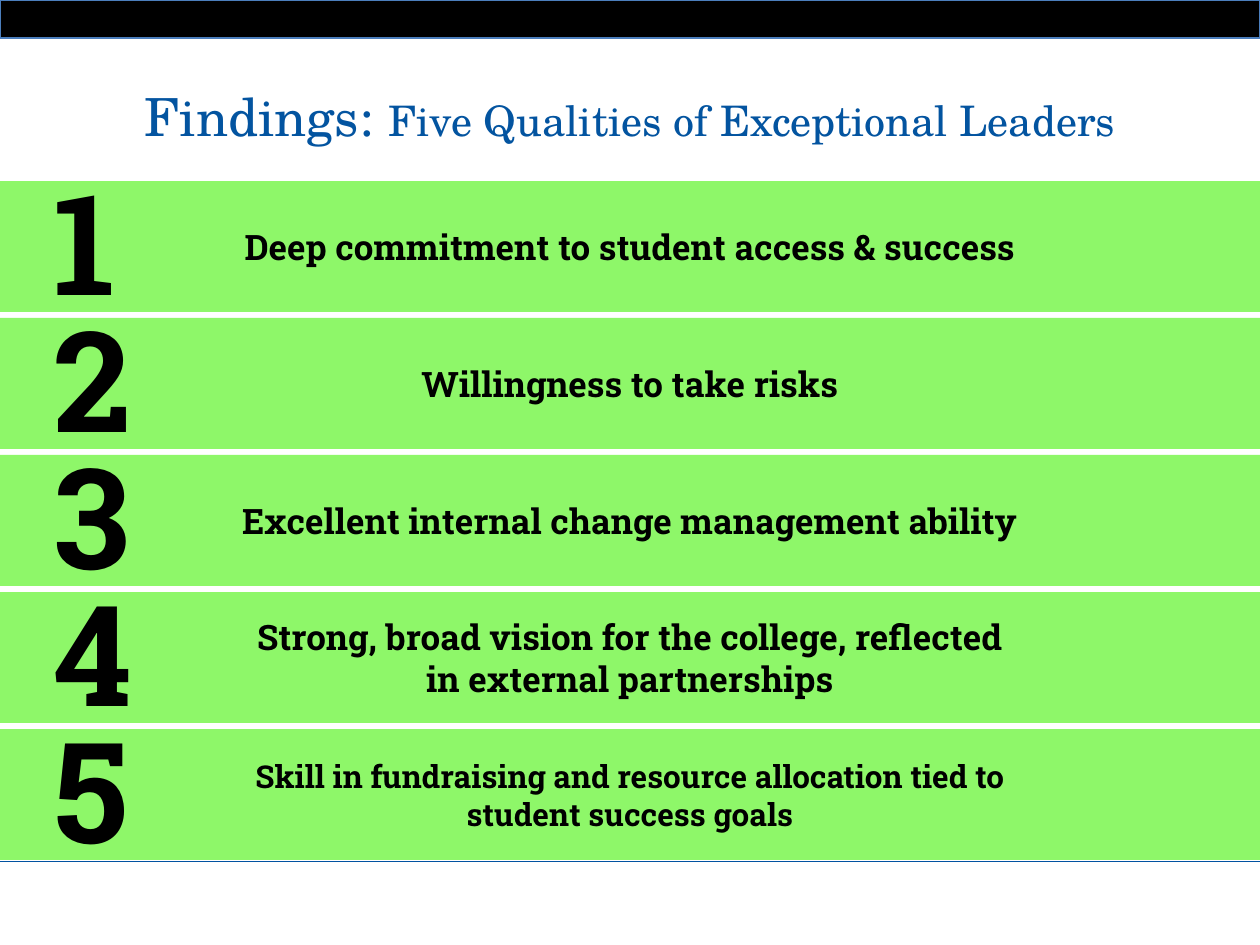
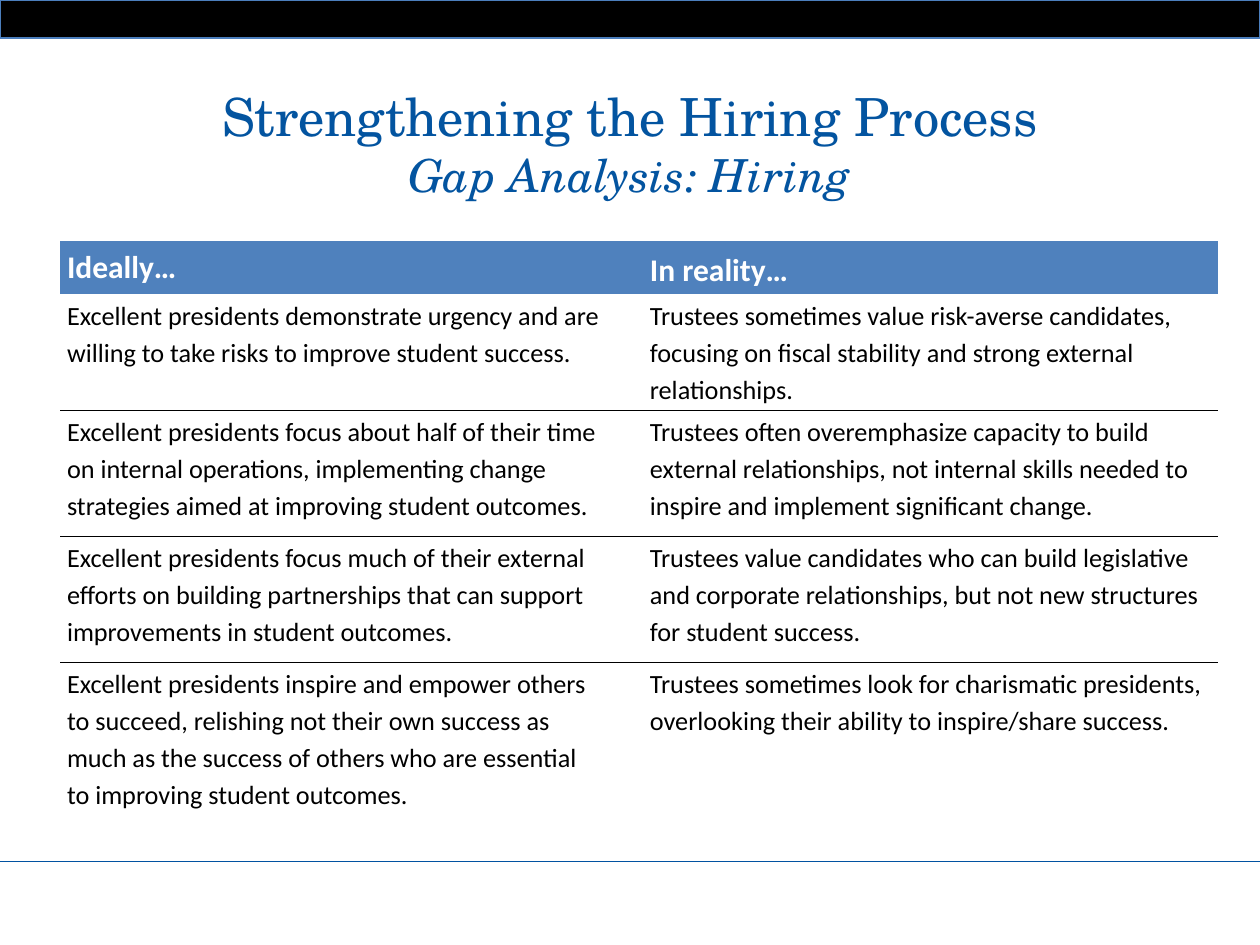
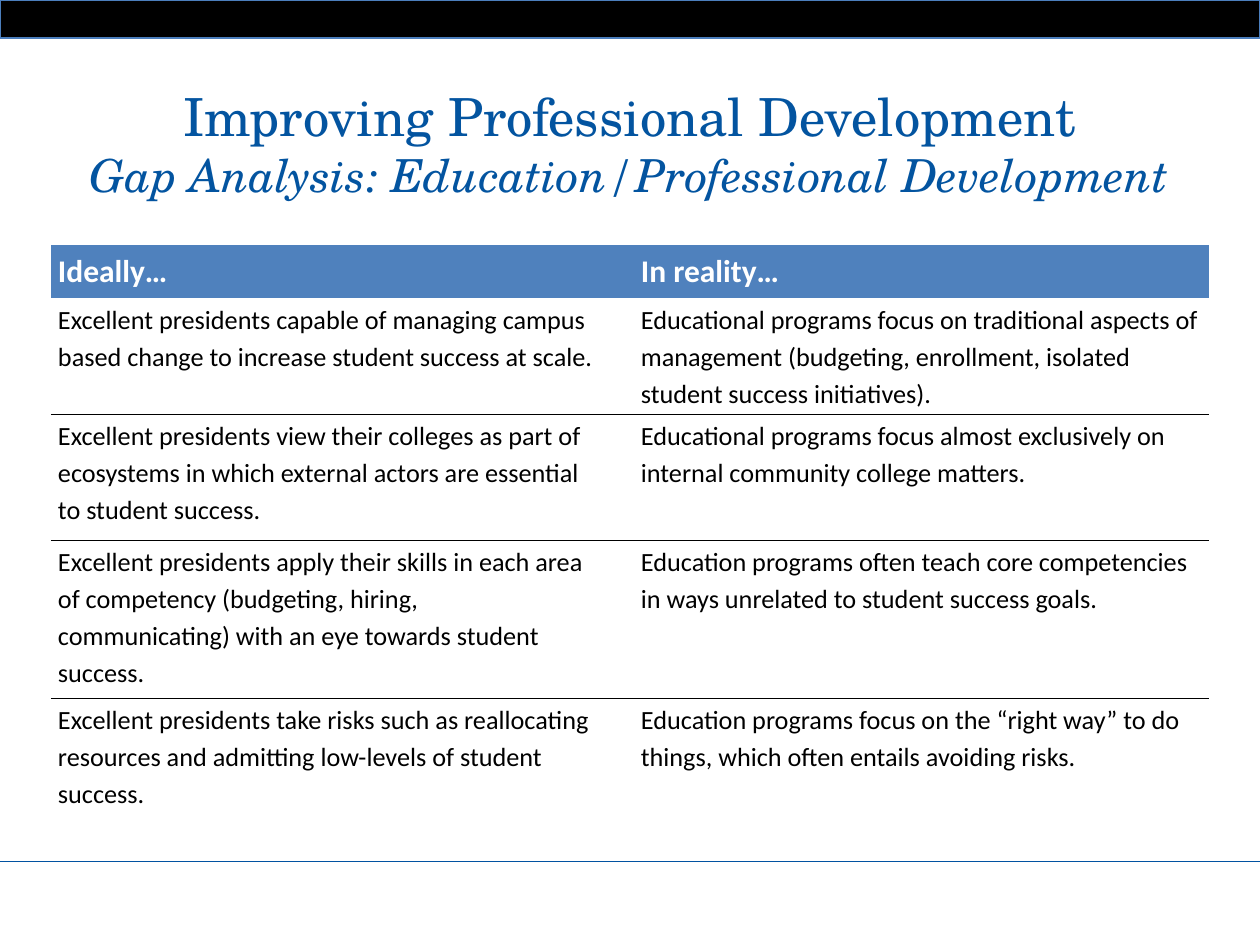
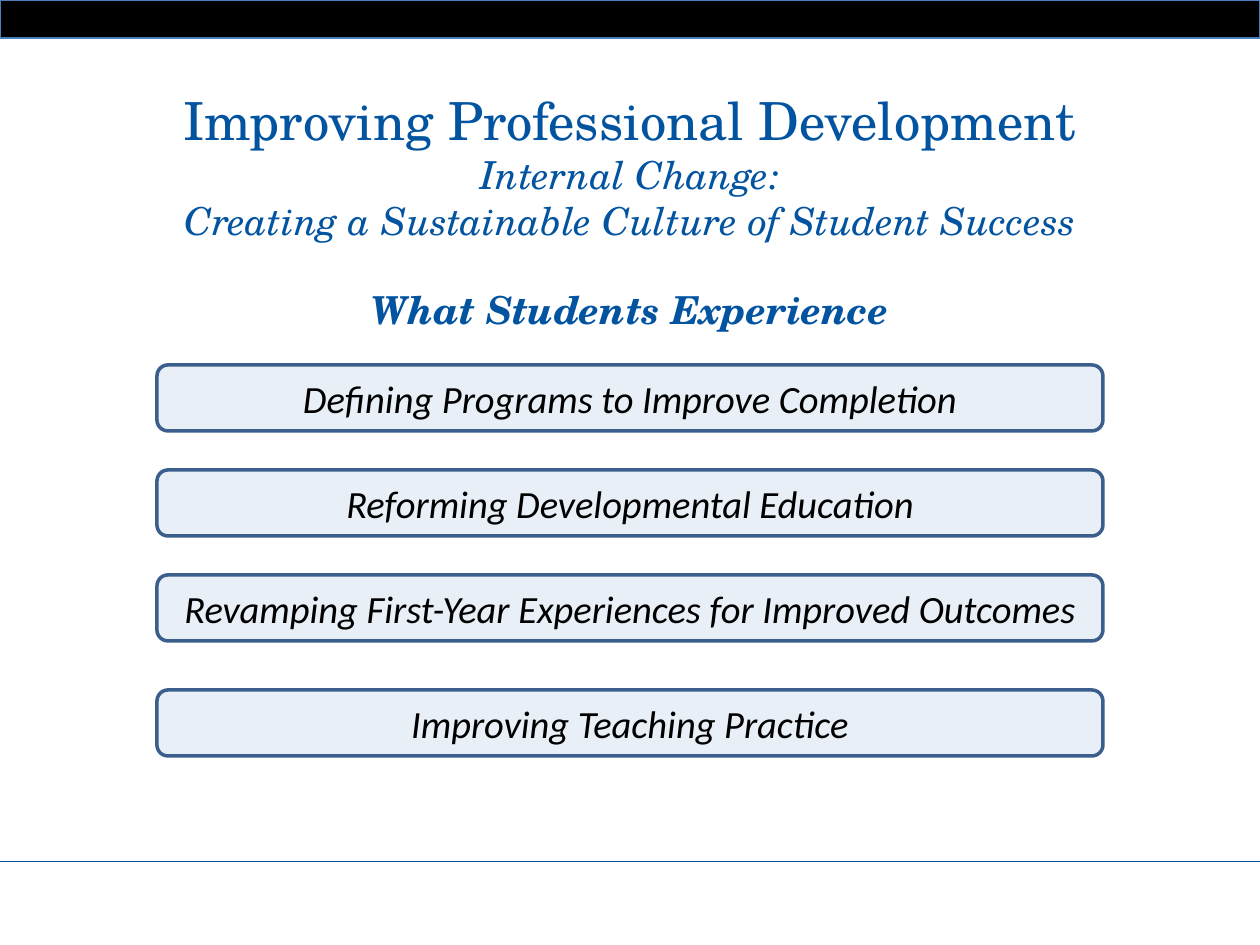
from lxml.etree import SubElement
from pptx import Presentation
from pptx.dml.color import RGBColor
from pptx.enum.shapes import MSO_CONNECTOR as CONN, MSO_SHAPE as SHAPE
from pptx.enum.text import MSO_ANCHOR as ANCHOR, PP_ALIGN as ALIGN
from pptx.oxml.ns import qn
from pptx.util import Emu, Pt

W, H = 1260, 945
BLACK, WHITE = "000000", "FFFFFF"
TITLE_BLUE, RULE_BLUE, BAR_EDGE = "0354A0", "0152A1", "4B7EBC"
GREEN, HEADER_BLUE = "8EF769", "4F81BD"
PILL_FILL, PILL_EDGE = "95B3D7", "3A5F8C"
SERIF, SLAB, SANS = "TeX Gyre Schola", "Roboto Slab", "Calibri"


def px(n):
    return Emu(round(n * 914400 / 126))


def rgb(value):
    return RGBColor.from_string(value)


def style(font, name, size, color=BLACK, bold=False, italic=False):
    font.name, font.size = name, Pt(size)
    font.bold, font.italic = bold, italic
    font.color.rgb = rgb(color)


class Deck:
    def __init__(self):
        self.prs = Presentation()
        self.prs.slide_width, self.prs.slide_height = px(W), px(H)
        self.s = None

    def new_slide(self):
        """Start a slide with the top bar and the footer rule."""
        self.s = self.prs.slides.add_slide(self.prs.slide_layouts[6])
        self.shape(SHAPE.RECTANGLE, 0, 0, W, 38, BLACK, BAR_EDGE, 0.75)
        rule = self.s.shapes.add_connector(CONN.STRAIGHT, 0, px(861), px(W), px(861))
        rule.line.color.rgb = rgb(RULE_BLUE)
        rule.line.width = Pt(0.5)
        SubElement(rule._element.spPr, qn("a:effectLst"))

    def shape(self, kind, x, y, w, h, fill, edge=None, edge_width=1):
        sp = self.s.shapes.add_shape(kind, px(x), px(y), px(w), px(h))
        sp.shadow.inherit = False
        sp.fill.solid()
        sp.fill.fore_color.rgb = rgb(fill)
        if edge:
            sp.line.color.rgb = rgb(edge)
            sp.line.width = Pt(edge_width)
        else:
            sp.line.fill.background()
        return sp

    def label(self, sp, text, name, size, **font):
        """Write centred text into a shape, one paragraph a line."""
        tf = sp.text_frame
        tf.word_wrap = True
        tf.vertical_anchor = ANCHOR.MIDDLE
        tf.text = text
        for p in tf.paragraphs:
            p.alignment = ALIGN.CENTER
            for r in p.runs:
                style(r.font, name, size, **font)

    def textbox(self, x, y, w, h):
        tf = self.s.shapes.add_textbox(px(x), px(y), px(w), px(h)).text_frame
        tf.word_wrap = True
        return tf

    def title(self, lines, y=78, h=136):
        """Each line is a list of runs: (text, size, font options)."""
        tf = self.textbox(0, y, W, h)
        for i, line in enumerate(lines):
            p = tf.add_paragraph() if i else tf.paragraphs[0]
            p.alignment = ALIGN.CENTER
            for text, size, options in line:
                r = p.add_run()
                r.text = text
                style(r.font, SERIF, size, TITLE_BLUE, **options)
        return tf

    def number_band(self, y, number, text, size):
        band = self.shape(SHAPE.RECTANGLE, 0, y, W, 131, GREEN)
        self.label(band, text, SLAB, size, bold=True)
        p = self.textbox(41, y - 32, 98, 183).paragraphs[0]
        p.text = str(number)
        p.space_after = Pt(12)
        style(p.runs[0].font, SLAB, 80, bold=True)

    def pill(self, y, text):
        sp = self.shape(SHAPE.ROUNDED_RECTANGLE, 157, y, 946, 66, PILL_FILL, PILL_EDGE, 2)
        color = sp._element.spPr.find(qn("a:solidFill"))[0]
        SubElement(color, qn("a:alpha"), val="20000")
        self.label(sp, text, SANS, 22, italic=True)

    def cell(self, cell, text, header, ruled):
        """Fill one cell; ruled names the sides that carry a thin line."""
        cell.margin_left = cell.margin_right = px(7)
        cell.margin_top = cell.margin_bottom = px(2)
        tcPr = cell._tc.get_or_add_tcPr()
        for side in ("lnL", "lnR", "lnT", "lnB"):
            ln = SubElement(tcPr, qn("a:" + side), w=str(Pt(0.25)))
            if side in ruled:
                SubElement(SubElement(ln, qn("a:solidFill")), qn("a:srgbClr"), val=BLACK)
            else:
                SubElement(ln, qn("a:noFill"))
        if header:
            cell.fill.solid()
            cell.fill.fore_color.rgb = rgb(HEADER_BLUE)
        else:
            cell.fill.background()
        p = cell.text_frame.paragraphs[0]
        p.text = text
        p.line_spacing = 1.15
        for r in p.runs:
            style(r.font, SANS, 18 if header else 15, WHITE if header else BLACK, bold=header)

    def gap_table(self, x, y, heights, pairs):
        """Compare ideal and reality in two columns around a narrow spacer."""
        rows = [("Ideally…", "In reality…")] + pairs
        widths = (552, 31, 575)
        table = self.s.shapes.add_table(len(rows), 3, px(x), px(y),
                                        px(sum(widths)), px(sum(heights))).table
        table.horz_banding = False
        for column, w in zip(table.columns, widths):
            column.width = px(w)
        for i, (ideal, reality) in enumerate(rows):
            table.rows[i].height = px(heights[i])
            ruled = []
            if i > 1:
                ruled.append("lnT")
            if 0 < i < len(rows) - 1:
                ruled.append("lnB")
            for j, text in enumerate((ideal, "", reality)):
                self.cell(table.cell(i, j), text, i == 0, ruled)
        return table


QUALITIES = [
    ("Deep commitment to student access & success", 20),
    ("Willingness to take risks", 20),
    ("Excellent internal change management ability", 20),
    ("Strong, broad vision for the college, reflected\nin external partnerships", 20),
    ("Skill in fundraising and resource allocation tied to\nstudent success goals", 18),
]
HIRING = [
    ("Excellent presidents demonstrate urgency and are willing to take risks to improve "
     "student success.",
     "Trustees sometimes value risk-averse candidates, focusing on fiscal stability and "
     "strong external relationships."),
    ("Excellent presidents focus about half of their time on internal operations, "
     "implementing change strategies aimed at improving student outcomes.",
     "Trustees often overemphasize capacity to build external relationships, not internal "
     "skills needed to inspire and implement significant change."),
    ("Excellent presidents focus much of their external efforts on building partnerships "
     "that can support improvements in student outcomes.",
     "Trustees value candidates who can build legislative and corporate relationships, but "
     "not new structures for student success."),
    ("Excellent presidents inspire and empower others to succeed, relishing not their own "
     "success as much as the success of others who are essential to improving student "
     "outcomes.",
     "Trustees sometimes look for charismatic presidents, overlooking their ability to "
     "inspire/share success."),
]
EDUCATION = [
    ("Excellent presidents capable of managing campus based change to increase student "
     "success at scale.",
     "Educational programs focus on traditional aspects of management (budgeting, "
     "enrollment, isolated student success initiatives)."),
    ("Excellent presidents view their colleges as part of ecosystems in which external "
     "actors are essential to student success.",
     "Educational programs focus almost exclusively on internal community college matters."),
    ("Excellent presidents apply their skills in each area of competency (budgeting, "
     "hiring, communicating) with an eye towards student success.",
     "Education programs often teach core competencies in ways unrelated to student "
     "success goals."),
    ("Excellent presidents take risks such as reallocating resources and admitting "
     "low-levels of student success.",
     "Education programs focus on the “right way” to do things, which often entails "
     "avoiding risks."),
]
STUDENT_EXPERIENCE = [
    (365, "Defining Programs to Improve Completion"),
    (470, "Reforming Developmental Education"),
    (575, "Revamping First-Year Experiences for Improved Outcomes"),
    (690, "Improving Teaching Practice"),
]


def main():
    deck = Deck()
    italic = {"italic": True}
    development = [("Improving Professional Development", 30, {})]

    deck.new_slide()
    deck.title([[("Findings: ", 30, {}), ("Five Qualities of Exceptional Leaders", 24, {})]], h=77)
    for i, (text, size) in enumerate(QUALITIES):
        deck.number_band(181 + 137 * i, i + 1, text, size)

    deck.new_slide()
    deck.title([[("Strengthening the Hiring Process", 30, {})],
                [("Gap Analysis: Hiring", 26, italic)]])
    table = deck.gap_table(60, 241, (53, 116, 126, 126, 122), HIRING)
    table.cell(0, 2).vertical_anchor = ANCHOR.MIDDLE

    deck.new_slide()
    deck.title([development,
                [("Gap Analysis: Education/Professional Development", 26, italic)]])
    deck.gap_table(51, 245, (53, 116, 126, 158, 122), EDUCATION)

    deck.new_slide()
    tf = deck.title([development,
                     [("Internal Change:", 22, italic)],
                     [("Creating a Sustainable Culture of Student Success", 22, italic)],
                     [("What Students Experience", 22, {"bold": True, "italic": True})]],
                    y=82, h=314)
    tf.paragraphs[-1].space_before = Pt(24)
    for y, text in STUDENT_EXPERIENCE:
        deck.pill(y, text)

    deck.prs.save("out.pptx")


if __name__ == "__main__":
    main()
